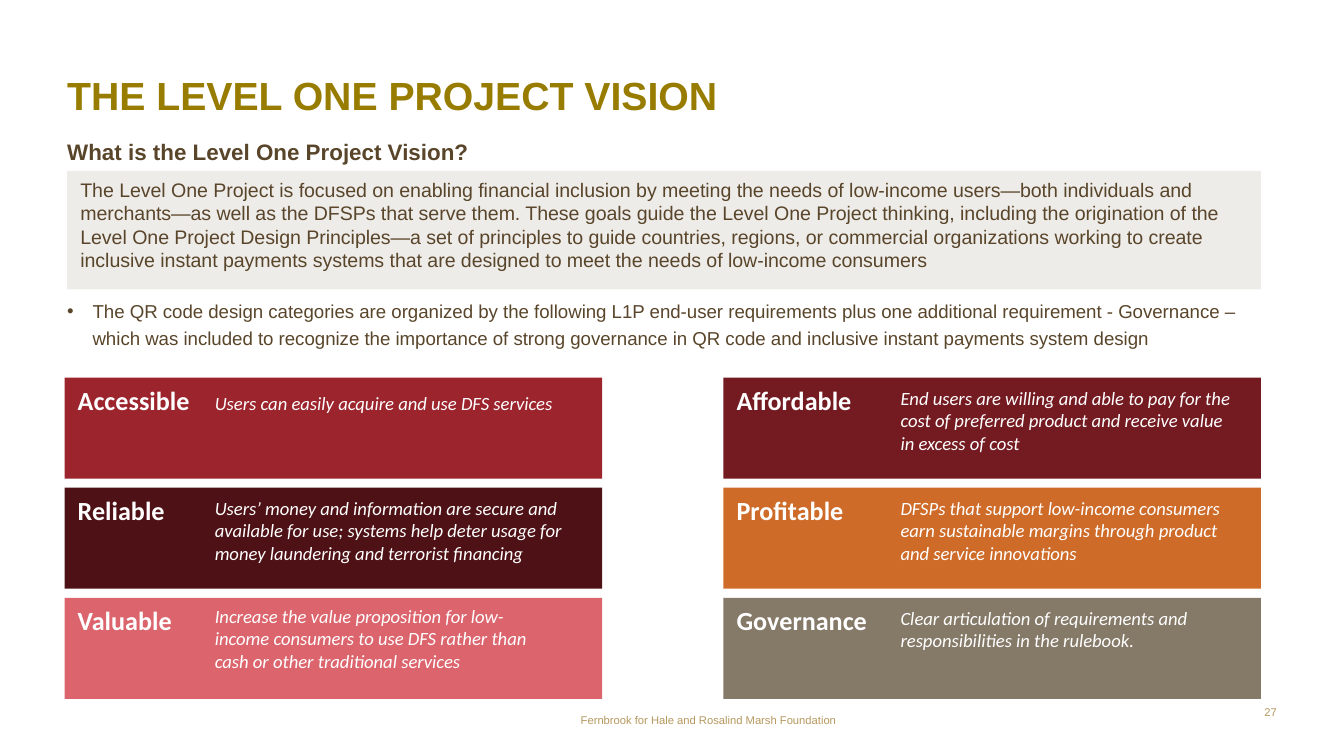
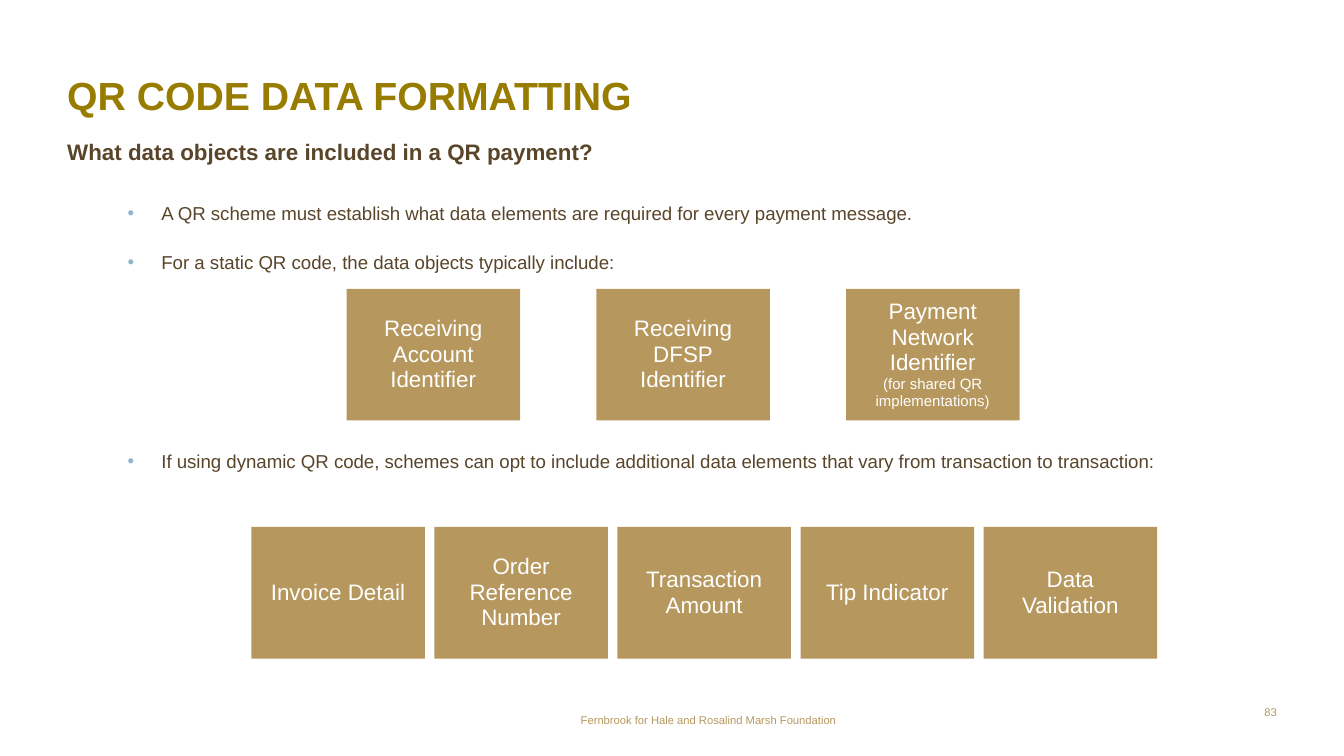
"""Build two slides: the Level One Project vision and QR code data formatting."""
from dataclasses import dataclass

from lxml import etree
from pptx import Presentation
from pptx.dml.color import RGBColor
from pptx.enum.shapes import MSO_SHAPE
from pptx.enum.text import MSO_ANCHOR, MSO_AUTO_SIZE, PP_ALIGN
from pptx.oxml.ns import qn
from pptx.util import Cm, Pt

RECTANGLE = MSO_SHAPE.RECTANGLE
TOP, MIDDLE = MSO_ANCHOR.TOP, MSO_ANCHOR.MIDDLE
LEFT, CENTER, RIGHT = PP_ALIGN.LEFT, PP_ALIGN.CENTER, PP_ALIGN.RIGHT
NO_AUTOFIT = MSO_AUTO_SIZE.NONE
TWO_CONTENT_LAYOUT = 3

COLORS = {
    "title": "977C00", "text": "59452A", "gold": "B6985E", "white": "FFFFFF",
    "panel": "EEECE9", "bullet": "8CB7C7", "red": "9B242D", "maroon": "741B22",
    "wine": "4E1216", "orange": "CE6B29", "rose": "DB646D", "taupe": "857968",
}
FOOTER = "Fernbrook for Hale and Rosalind Marsh Foundation"
MARGIN = 1.27
NO_INSETS = (0, 0, 0, 0)
TEXT_INSETS = (0.25, 0.13, 0.25, 0.13)
CARD_INSETS = (0.25, 0.13, 0.2, 0.13)
CARD_WIDTH, CARD_HEIGHT = 10.16, 1.91
CARD_TOP, CARD_PITCH = 7.14, 2.08
TILE_WIDTH, TILE_HEIGHT = 3.28, 2.49


@dataclass
class Card:
    """A requirement with its description."""
    name: str
    color: str
    description: str
    text_width: float = 6.88
    text_drop: float = 0.04


CARD_COLUMNS = [
    (1.22, 2.59, [
        Card("Accessible", "red", "Users can easily acquire and use DFS services",
             7.26, 0.13),
        Card("Reliable", "wine",
             "Users’ money and information are secure and available for use; "
             "systems help deter usage for money laundering and terrorist financing",
             7.39),
        Card("Valuable", "rose",
             "Increase the value proposition for low-income consumers to use DFS "
             "rather than cash or other traditional services", 6.86, 0),
    ]),
    (13.67, 3.1, [
        Card("Affordable", "maroon",
             "End users are willing and able to pay for the cost of preferred "
             "product and receive value in excess of cost"),
        Card("Profitable", "orange",
             "DFSPs that support low-income consumers earn sustainable margins "
             "through product and service innovations"),
        Card("Governance", "taupe",
             "Clear articulation of requirements and responsibilities in the rulebook."),
    ]),
]
VISION = (
    "The Level One Project is focused on enabling financial inclusion by meeting "
    "the needs of low-income users—both individuals and merchants—as well as the "
    "DFSPs that serve them. These goals guide the Level One Project thinking, "
    "including the origination of the Level One Project Design Principles—a set of "
    "principles to guide countries, regions, or commercial organizations working to "
    "create inclusive instant payments systems that are designed to meet the needs "
    "of low-income consumers"
)
CATEGORIES = (
    "The QR code design categories are organized by the following L1P end-user "
    "requirements plus one additional requirement - Governance – which was included "
    "to recognize the importance of strong governance in QR code and inclusive "
    "instant payments system design"
)
DATA_POINTS = [
    "A QR scheme must establish what data elements are required for every payment message.",
    "For a static QR code, the data objects typically include:",
    "If using dynamic QR code, schemes can opt to include additional data elements "
    "that vary from transaction to transaction:",
]
STATIC_TILES = ["Receiving Account Identifier", "Receiving DFSP\nIdentifier",
                "Payment Network Identifier"]
DYNAMIC_TILES = ["Invoice Detail", "Order Reference Number", "Transaction Amount",
                 "Tip Indicator", "Data Validation"]


def rgb(name):
    """Look up a palette colour."""
    return RGBColor.from_string(COLORS[name])


def set_font(font, size, color, name="Arial", bold=False, italic=False):
    """Format a font."""
    font.name, font.size = name, Pt(size)
    font.bold, font.italic = bold, italic
    font.color.rgb = rgb(color)


def set_frame(frame, insets, anchor=TOP):
    """Set the wrapping, margins and anchor of a text frame."""
    frame.word_wrap = True
    frame.auto_size = NO_AUTOFIT
    frame.vertical_anchor = anchor
    (frame.margin_left, frame.margin_top,
     frame.margin_right, frame.margin_bottom) = map(Cm, insets)


def set_bullet(paragraph, hang, indent, color):
    """Give a paragraph a hanging bullet, or none when hang is zero."""
    properties = paragraph._p.get_or_add_pPr()
    properties.set("marL", str(Cm(indent)))
    properties.set("indent", str(-Cm(hang)))
    if hang:
        bullet_color = etree.SubElement(properties, qn("a:buClr"))
        etree.SubElement(bullet_color, qn("a:srgbClr"), val=COLORS[color])
        etree.SubElement(properties, qn("a:buChar"), char="•")
    else:
        etree.SubElement(properties, qn("a:buNone"))


def fill_placeholder(placeholder, box, lines):
    """Place a placeholder and return its paragraphs."""
    (placeholder.left, placeholder.top,
     placeholder.width, placeholder.height) = map(Cm, box)
    frame = placeholder.text_frame
    frame.text = "\n".join(lines)
    set_frame(frame, NO_INSETS)
    return frame.paragraphs


def add_list(placeholder, box, lines, hang, indent, color, level=0, gaps=(0,)):
    """Fill a body placeholder with bulleted lines and given gaps before them."""
    paragraphs = fill_placeholder(placeholder, box, lines)
    for paragraph, gap in zip(paragraphs, gaps):
        paragraph.level = level
        set_bullet(paragraph, hang, indent, color)
        paragraph.line_spacing = 1.2
        paragraph.space_before, paragraph.space_after = Pt(gap), Pt(6)
        set_font(paragraph.font, 10, "text")


def add_text(shapes, text, box, size, color, insets=NO_INSETS, align=LEFT, **style):
    """Add a text box with one paragraph."""
    frame = shapes.add_textbox(*map(Cm, box)).text_frame
    set_frame(frame, insets)
    paragraph = frame.paragraphs[0]
    paragraph.text, paragraph.alignment = text, align
    set_font(paragraph.font, size, color, **style)


def add_block(shapes, text, box, fill, size, color="white", insets=TEXT_INSETS,
              anchor=TOP, align=LEFT, spacing=1.0, **style):
    """Add a filled rectangle with text."""
    shape = shapes.add_shape(RECTANGLE, *map(Cm, box))
    shape.shadow.inherit = False
    shape.fill.solid()
    shape.fill.fore_color.rgb = rgb(fill)
    shape.line.fill.background()
    frame = shape.text_frame
    frame.text = text
    set_frame(frame, insets, anchor)
    for paragraph in frame.paragraphs:
        paragraph.alignment, paragraph.line_spacing = align, spacing
        set_font(paragraph.font, size, color, **style)
    return shape


def add_card(slide, card, left, top, text_offset):
    """Add a grouped requirement card."""
    shapes = slide.shapes.add_group_shape().shapes
    add_block(shapes, card.name, (left, top, CARD_WIDTH, CARD_HEIGHT), card.color,
              14, insets=CARD_INSETS, name="Calibri", bold=True)
    add_text(shapes, card.description,
             (left + text_offset, top + card.text_drop, card.text_width, 1.5),
             10, "white", TEXT_INSETS, name="Calibri", italic=True)


def add_tiles(slide, labels, left, top, pitch):
    """Add a row of equal tiles and return them."""
    return [add_block(slide.shapes, label,
                      (left + index * pitch, top, TILE_WIDTH, TILE_HEIGHT),
                      "gold", 12, anchor=MIDDLE, align=CENTER, spacing=0.95)
            for index, label in enumerate(labels)]


def add_slide(presentation, title, question, number):
    """Add a slide with title, question, footer and number; return it and its body."""
    slide = presentation.slides.add_slide(presentation.slide_layouts[TWO_CONTENT_LAYOUT])
    heading, body, subtitle = slide.placeholders
    paragraph = fill_placeholder(heading, (MARGIN, 1.42, 22.86, 1.07), [title])[0]
    paragraph.alignment, paragraph.line_spacing = LEFT, 0.95
    set_font(paragraph.font, 21, "title", bold=True)
    paragraph = fill_placeholder(subtitle, (MARGIN, 2.51, 22.86, 1.47), [question])[0]
    set_bullet(paragraph, 0, 0, "text")
    paragraph.line_spacing, paragraph.space_before = 1.2, Pt(0)
    set_font(paragraph.font, 12, "text", bold=True)
    add_text(slide.shapes, FOOTER, (10.5, 13.49, 5.3, 0.25), 6, "gold", align=RIGHT)
    add_text(slide.shapes, number, (23.13, 13.33, 1, 0.25), 6, "gold", align=RIGHT)
    return slide, body


def build_vision(presentation):
    """Build the vision slide with its six requirement cards."""
    slide, body = add_slide(presentation, "THE LEVEL ONE PROJECT VISION",
                            "What is the Level One Project Vision?", "27")
    add_list(body, (MARGIN, 5.59, 22.12, 1.35), [CATEGORIES], 0.48, 0.48, "text")
    add_block(slide.shapes, VISION, (MARGIN, 3.23, 22.56, 2.24), "panel", 10.5, "text")
    for left, text_offset, cards in CARD_COLUMNS:
        for row, card in enumerate(cards):
            add_card(slide, card, left, CARD_TOP + row * CARD_PITCH, text_offset)


def build_data_formatting(presentation):
    """Build the slide on data objects in a QR payment."""
    slide, body = add_slide(presentation, "QR CODE DATA FORMATTING",
                            "What data objects are included in a QR payment?", "83")
    add_list(body, (1.78, 3.73, 21.36, 7.21), DATA_POINTS, 0.64, 1.27, "bullet",
             level=1, gaps=(0, 6, 86))
    network_tile = add_tiles(slide, STATIC_TILES, 6.55, 5.46, 4.72)[-1]
    paragraph = network_tile.text_frame.paragraphs[0]
    paragraph.add_line_break()
    note = paragraph.add_run()
    note.text = "(for shared QR implementations)"
    note.font.size = Pt(8)
    add_tiles(slide, DYNAMIC_TILES, 4.75, 9.96, 3.46)


def main():
    """Build and save the presentation."""
    presentation = Presentation()
    presentation.slide_width, presentation.slide_height = Cm(25.4), Cm(14.29)
    build_vision(presentation)
    build_data_formatting(presentation)
    presentation.save("out.pptx")


if __name__ == "__main__":
    main()
